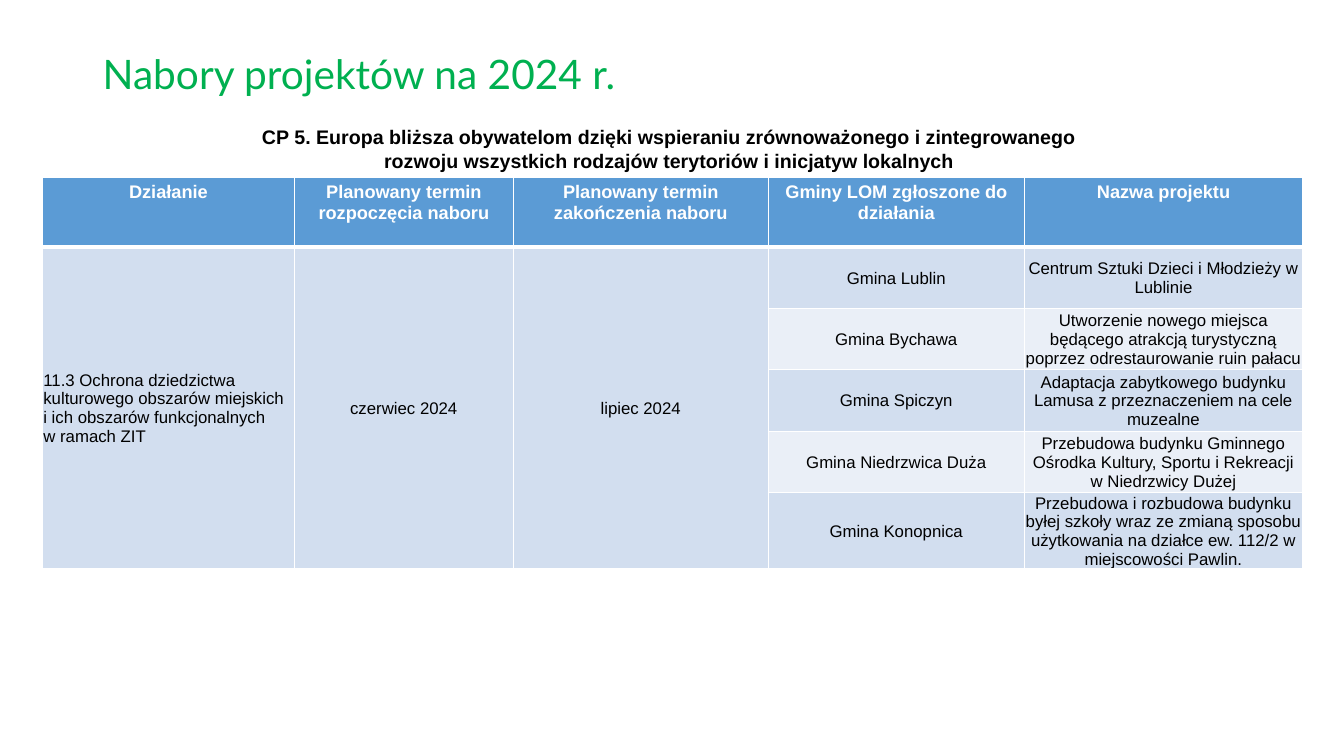
"""Build the slide listing the 2024 project calls."""
from dataclasses import dataclass

from lxml import etree
from pptx import Presentation
from pptx.dml.color import RGBColor
from pptx.enum.text import MSO_ANCHOR, PP_ALIGN
from pptx.oxml.ns import qn
from pptx.slide import Slide
from pptx.table import _Cell
from pptx.text.text import TextFrame
from pptx.util import Inches, Pt

LEFT, CENTER = PP_ALIGN.LEFT, PP_ALIGN.CENTER
TOP, MIDDLE = MSO_ANCHOR.TOP, MSO_ANCHOR.MIDDLE

COLORS = {
    "title": "00B050",
    "text": "000000",
    "white": "FFFFFF",
    "header": "5B9BD5",
    "odd": "D2DEEF",
    "even": "EAEFF7",
}
BODY_MARGINS = {
    "margin_left": Inches(0.01),
    "margin_right": Inches(0.01),
    "margin_top": Inches(0.01),
    "margin_bottom": Inches(0),
}
COLUMN_WIDTHS = (2.5, 2.17, 2.53, 2.54, 2.76)
HEADER_HEIGHT = 0.69
PROJECT_HEIGHT = 0.61
HEADINGS = (
    "Działanie",
    "Planowany termin rozpoczęcia naboru",
    "Planowany termin zakończenia naboru",
    "Gminy LOM zgłoszone do działania",
    "Nazwa projektu",
)
CALL = (
    "11.3 Ochrona dziedzictwa kulturowego obszarów miejskich \n"
    "i ich obszarów funkcjonalnych \nw ramach ZIT",
    "czerwiec 2024",
    "lipiec 2024",
)


@dataclass(frozen=True)
class TextStyle:
    size: float
    color: str
    font: str = "Arial"
    bold: bool = False
    align: PP_ALIGN = CENTER
    line_spacing: float = 1.0


@dataclass(frozen=True)
class TextBlock:
    text: str
    left: float
    top: float
    width: float
    height: float
    style: TextStyle
    anchor: MSO_ANCHOR = TOP
    wrap: bool = True


@dataclass(frozen=True)
class Project:
    commune: str
    name: str


HEADING_STYLE = TextStyle(13, "white", bold=True)
BODY_STYLE = TextStyle(12, "text")
ACTION_STYLE = TextStyle(12, "text", align=LEFT)

TEXT_BLOCKS = (
    TextBlock("Nabory projektów na 2024 r.", 0.92, 0.03, 11.5, 1.45,
              TextStyle(29, "title", "Lato", align=LEFT, line_spacing=0.9), MIDDLE),
    TextBlock("CP 5. Europa bliższa obywatelom dzięki wspieraniu zrównoważonego i zintegrowanego \n"
              "rozwoju wszystkich rodzajów terytoriów i inicjatyw lokalnych ",
              2.48, 1.19, 8.37, 0.57, TextStyle(14, "text", bold=True), wrap=False),
)
PROJECTS = (
    Project("Gmina Lublin", "Centrum Sztuki Dzieci i Młodzieży w Lublinie"),
    Project("Gmina Bychawa", "Utworzenie nowego miejsca będącego atrakcją turystyczną "
            "poprzez odrestaurowanie ruin pałacu"),
    Project("Gmina Spiczyn", "Adaptacja zabytkowego budynku Lamusa z przeznaczeniem "
            "na cele muzealne"),
    Project("Gmina Niedrzwica Duża", "Przebudowa budynku Gminnego Ośrodka Kultury, "
            "Sportu i Rekreacji w Niedrzwicy Dużej"),
    Project("Gmina Konopnica", "Przebudowa i rozbudowa budynku byłej szkoły wraz ze zmianą "
            "sposobu użytkowania na działce ew. 112/2 w miejscowości Pawlin."),
)


def apply_format(target: object, values: dict) -> None:
    for attribute, value in values.items():
        setattr(target, attribute, value)


def write_text(frame: TextFrame, text: str, style: TextStyle) -> None:
    paragraph = frame.paragraphs[0]
    paragraph.text = text
    apply_format(paragraph, {"alignment": style.align, "line_spacing": style.line_spacing})
    for run in paragraph.runs:
        apply_format(run.font, {"name": style.font, "size": Pt(style.size), "bold": style.bold})
        run.font.color.rgb = RGBColor.from_string(COLORS[style.color])


def add_text_block(slide: Slide, block: TextBlock) -> None:
    bounds = (block.left, block.top, block.width, block.height)
    frame = slide.shapes.add_textbox(*map(Inches, bounds)).text_frame
    apply_format(frame, {"word_wrap": block.wrap, "vertical_anchor": block.anchor})
    write_text(frame, block.text, block.style)


def paint_cell(cell: _Cell, color: str, below: float = 1, above: float = 1) -> None:
    cell.fill.solid()
    cell.fill.fore_color.rgb = RGBColor.from_string(COLORS[color])
    properties = cell._tc.get_or_add_tcPr()
    borders = {"a:lnL": 1, "a:lnR": 1, "a:lnT": above, "a:lnB": below}
    for position, (side, width) in enumerate(borders.items()):
        line = etree.Element(qn(side), w=str(Pt(width)))
        fill = etree.SubElement(line, qn("a:solidFill"))
        etree.SubElement(fill, qn("a:srgbClr"), val=COLORS["white"])
        properties.insert(position, line)


def fill_body_cell(cell: _Cell, text: str, style: TextStyle) -> None:
    apply_format(cell, {**BODY_MARGINS, "vertical_anchor": MIDDLE})
    write_text(cell.text_frame, text, style)


def add_calls_table(slide: Slide) -> None:
    height = HEADER_HEIGHT + PROJECT_HEIGHT * len(PROJECTS)
    bounds = (0.42, 1.76, sum(COLUMN_WIDTHS), height)
    table = slide.shapes.add_table(len(PROJECTS) + 1, len(HEADINGS),
                                   *map(Inches, bounds)).table
    for column, width in zip(table.columns, COLUMN_WIDTHS):
        column.width = Inches(width)
    for index, row in enumerate(table.rows):
        row.height = Inches(PROJECT_HEIGHT if index else HEADER_HEIGHT)

    for column, heading in enumerate(HEADINGS):
        cell = table.cell(0, column)
        paint_cell(cell, "header", below=3)
        write_text(cell.text_frame, heading, HEADING_STYLE)

    for row, project in enumerate(PROJECTS, start=1):
        band = "odd" if row % 2 else "even"
        for column in range(len(HEADINGS)):
            color = "odd" if column < len(CALL) else band
            cell = table.cell(row, column)
            apply_format(cell, BODY_MARGINS)
            paint_cell(cell, color, above=3 if row == 1 else 1)
        for column, text in enumerate((project.commune, project.name), start=len(CALL)):
            fill_body_cell(table.cell(row, column), text, BODY_STYLE)

    for column, text in enumerate(CALL):
        cell = table.cell(1, column)
        cell.merge(table.cell(len(PROJECTS), column))
        fill_body_cell(cell, text, BODY_STYLE if column else ACTION_STYLE)


def main() -> None:
    presentation = Presentation()
    apply_format(presentation, {"slide_width": Inches(13.33), "slide_height": Inches(7.5)})
    slide = presentation.slides.add_slide(presentation.slide_layouts[6])
    add_calls_table(slide)
    for block in TEXT_BLOCKS:
        add_text_block(slide, block)
    presentation.save("out.pptx")


if __name__ == "__main__":
    main()
